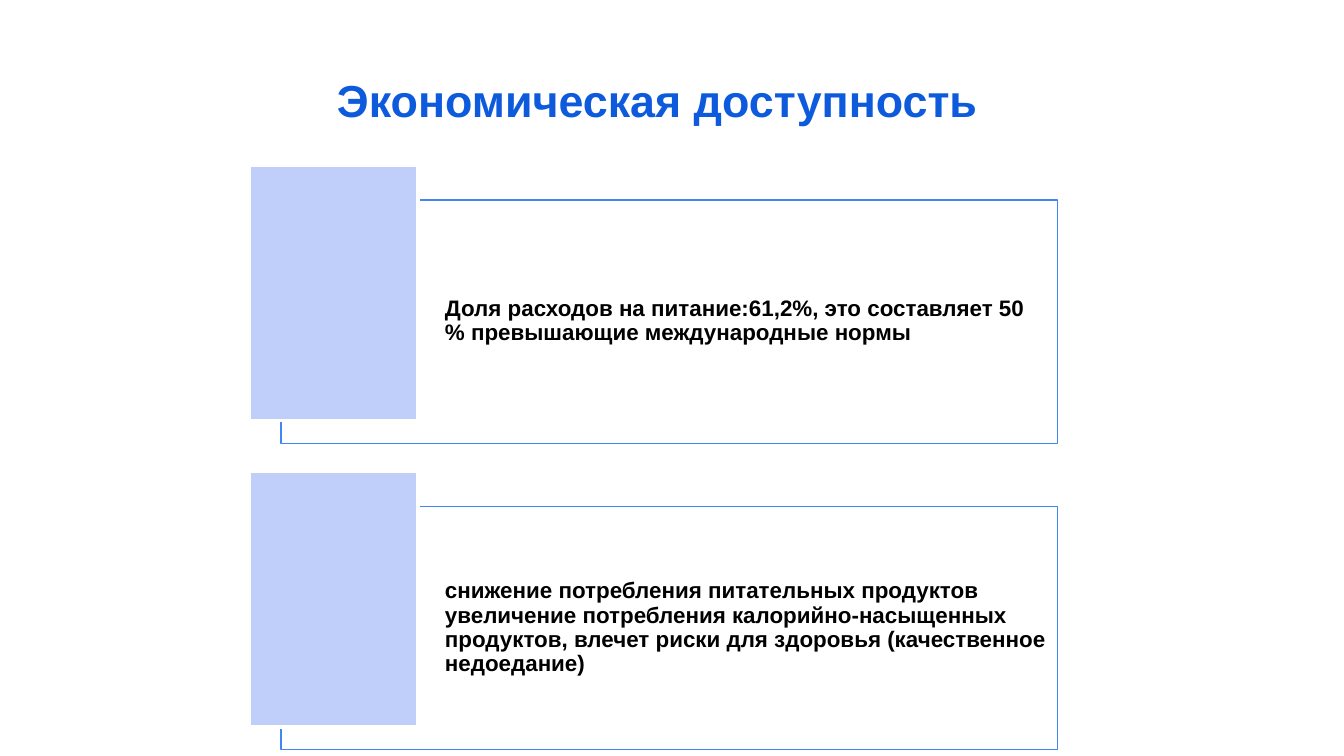
from pptx import Presentation
from pptx.dml.color import RGBColor
from pptx.enum.shapes import MSO_SHAPE
from pptx.enum.text import MSO_ANCHOR, PP_ALIGN
from pptx.util import Cm, Pt

RECT = MSO_SHAPE.RECTANGLE
TOP, MIDDLE = MSO_ANCHOR.TOP, MSO_ANCHOR.MIDDLE
LEFT, CENTER = PP_ALIGN.LEFT, PP_ALIGN.CENTER

CARD_TOP = 3.78
CARD_PITCH = 5.79
CARDS = [
    "Доля расходов на питание:61,2%, это составляет 50 % превышающие международные нормы",
    "снижение потребления питательных продуктов увеличение потребления "
    "калорийно-насыщенных продуктов, влечет риски для здоровья (качественное недоедание)",
]


def add_rect(x, y, w, h, fill, line, line_width):
    sp = s.shapes.add_shape(RECT, Cm(x), Cm(y), Cm(w), Cm(h))
    sp.shadow.inherit = False
    sp.fill.solid()
    sp.fill.fore_color.rgb = RGBColor.from_string(fill)
    sp.line.color.rgb = RGBColor.from_string(line)
    sp.line.width = Pt(line_width)
    return sp


def set_text(sp, text, size, color, align, anchor, left_inset, inset):
    """Fill a shape with one bold paragraph; insets are in centimetres."""
    tf = sp.text_frame
    tf.word_wrap = True
    tf.vertical_anchor = anchor
    tf.margin_left = Cm(left_inset)
    tf.margin_top = tf.margin_right = tf.margin_bottom = Cm(inset)
    p = tf.paragraphs[0]
    p.text = text
    p.alignment = align
    p.font.name = "Arial"
    p.font.size = Pt(size)
    p.font.bold = True
    p.font.color.rgb = RGBColor.from_string(color)
    return p


prs = Presentation()
prs.slide_width, prs.slide_height = Cm(25.4), Cm(14.29)
s = prs.slides.add_slide(prs.slide_layouts[6])

title = s.shapes.add_textbox(Cm(0.89), Cm(1.12), Cm(23.29), Cm(1.57))
set_text(title, "Экономическая доступность ", 24, "0D5BDC", CENTER, TOP, 0.25, 0.25)

for i, text in enumerate(CARDS):
    y = CARD_TOP + i * CARD_PITCH
    card = add_rect(5.31, y, 14.68, 4.6, "FFFFFF", "4285F4", 0.75)
    p = set_text(card, text, 12, "000000", LEFT, MIDDLE, 3.1, 0.13)
    p.line_spacing = 0.9
    add_rect(4.7, y - 0.66, 3.2, 4.83, "C0CEFA", "FFFFFF", 2)

prs.save("out.pptx")
